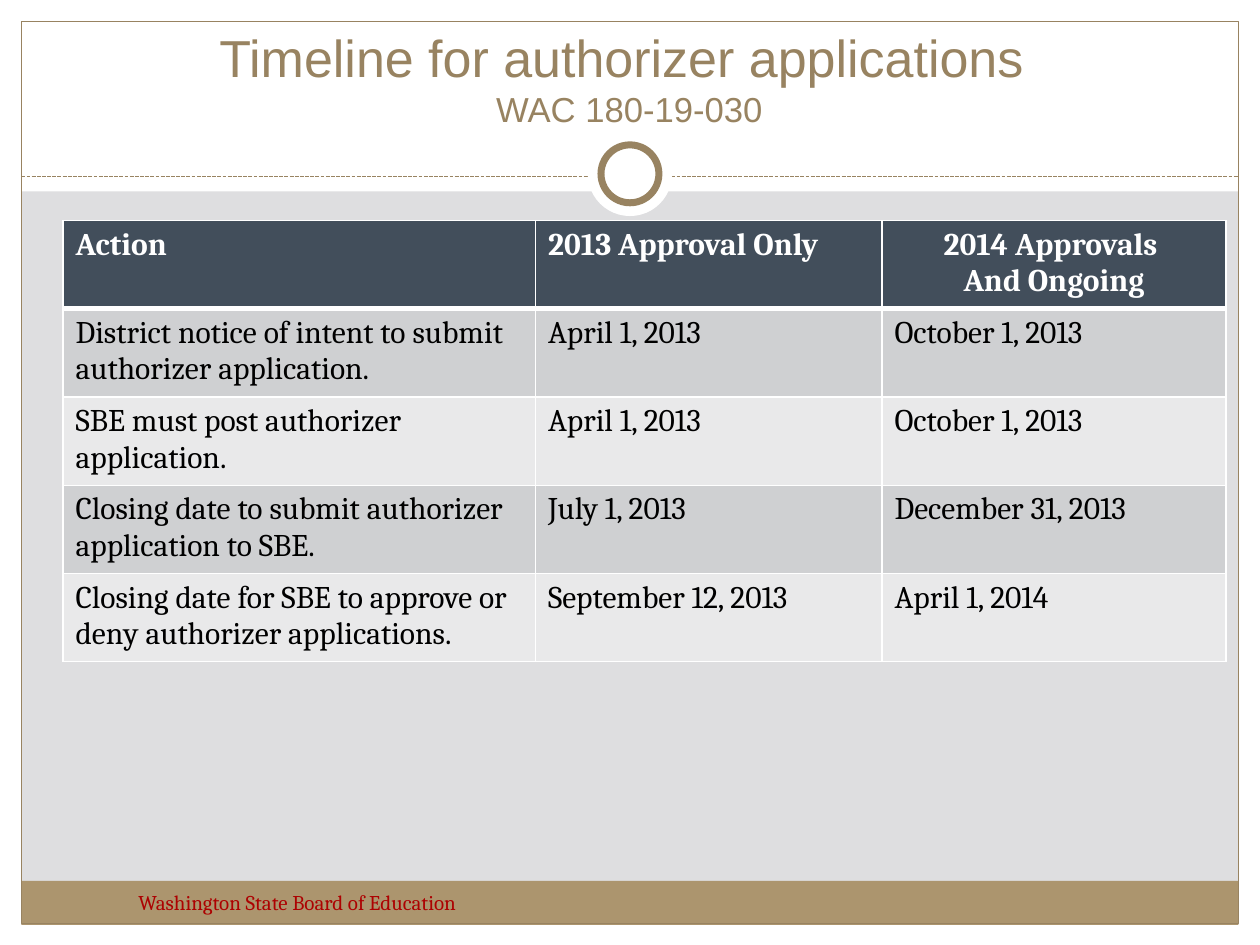
from lxml import etree
from pptx import Presentation, util as u
from pptx.dml.color import RGBColor
from pptx.enum import dml, shapes, text
from pptx.oxml.ns import qn

WHITE = RGBColor(0xFF, 0xFF, 0xFF)
BLACK = RGBColor(0, 0, 0)
GRAY = RGBColor(0xDE, 0xDE, 0xE0)
TAN = RGBColor(0xAC, 0x95, 0x6E)
BROWN = RGBColor(0x98, 0x83, 0x61)
RED = RGBColor(0xAD, 0x01, 0x01)
SLATE = RGBColor(0x42, 0x4E, 0x5B)
BANDS = RGBColor(0xCF, 0xD0, 0xD2), RGBColor(0xE9, 0xE9, 0xEA)

WIDE, HIGH = 10, 7.5
EDGE = 0.17
MID = WIDE / 2
RULE = 1.4
RING = 1.38
COLS = 3.75, 2.75, 2.73
ROW = 0.68
HEAD = ["Action"], ["2013 Approval Only"], ["2014 Approvals ", "And Ongoing"]
DATES = [
    ("District notice of intent to submit authorizer application.",
     "April 1, 2013", "October 1, 2013"),
    ("SBE must post authorizer application.", "April 1, 2013", "October 1, 2013"),
    ("Closing date to submit authorizer application to SBE.",
     "July 1, 2013", "December 31, 2013"),
    ("Closing date for SBE to approve or deny authorizer applications.",
     "September 12, 2013", "April 1, 2014"),
]


def inch(*vals):
    return [u.Inches(v) for v in vals]


def add_form(slide, kind, box, fill=None, line=None, width=0.75):
    form = slide.shapes.add_shape(kind, *inch(*box))
    form.shadow.inherit = False
    if fill is None:
        form.fill.background()
    else:
        form.fill.solid()
        form.fill.fore_color.rgb = fill
    if line is None:
        form.line.fill.background()
    else:
        form.line.color.rgb = line
        form.line.width = u.Pt(width)


def add_disc(slide, size, **style):
    """Draw a white circle centred on the ring's middle."""
    box = MID - size / 2, RING - size / 2, size, size
    add_form(slide, shapes.MSO_SHAPE.OVAL, box, WHITE, **style)


def add_rule(slide):
    rule = slide.shapes.add_connector(
        shapes.MSO_CONNECTOR.STRAIGHT, *inch(EDGE, RULE, WIDE - EDGE, RULE))
    rule.line.color.rgb = BROWN
    rule.line.width = u.Pt(0.75)
    rule.line.dash_style = dml.MSO_LINE.SQUARE_DOT
    etree.SubElement(rule._element.spPr, qn("a:effectLst"))


def add_run(para, words, face, size, color, bold=False):
    run = para.add_run()
    run.text = words
    font = run.font
    font.name, font.size, font.bold = face, u.Pt(size), bold
    font.color.rgb = color


def add_box(slide, box):
    frame = slide.shapes.add_textbox(*inch(*box)).text_frame
    frame.word_wrap = True
    return frame


def add_title(slide):
    frame = add_box(slide, (0.33, 0.25, 9.33, 0.83))
    frame.vertical_anchor = text.MSO_ANCHOR.BOTTOM
    para = frame.paragraphs[0]
    para.alignment = text.PP_ALIGN.CENTER
    add_run(para, "Timeline for authorizer applications ", "Arial", 29.7, BROWN)
    para.add_line_break()
    add_run(para, "WAC 180-19-030", "Arial", 19.8, BROWN)


def set_edges(cell, base):
    """Give a cell white borders, the bottom one `base` points wide."""
    props = cell._tc.get_or_add_tcPr()
    for side, width in zip("LRTB", (1, 1, 1, base)):
        edge = etree.SubElement(props, qn(f"a:ln{side}"), w=str(u.Pt(width)))
        fill = etree.SubElement(edge, qn("a:solidFill"))
        etree.SubElement(fill, qn("a:srgbClr"), val=str(WHITE))


def fill_cell(cell, lines, fill, color, bold=False, base=1):
    set_edges(cell, base)
    cell.fill.solid()
    cell.fill.fore_color.rgb = fill
    frame = cell.text_frame
    for i, line in enumerate(lines):
        para = frame.add_paragraph() if i else frame.paragraphs[0]
        if len(lines) > 1:
            para.alignment = text.PP_ALIGN.CENTER
        add_run(para, line, "Cambria", 18, color, bold)


def add_dates(slide):
    count = len(DATES) + 1
    table = slide.shapes.add_table(
        count, len(COLS), *inch(0.5, 1.75, sum(COLS), count * ROW)).table
    for col, width in zip(table.columns, COLS):
        col.width = u.Inches(width)
    for c, lines in enumerate(HEAD):
        # A thicker border sets the head off from the body.
        fill_cell(table.cell(0, c), lines, SLATE, WHITE, bold=True, base=3)
    for r, row in enumerate(DATES):
        for c, words in enumerate(row):
            fill_cell(table.cell(r + 1, c), [words], BANDS[r % 2], BLACK)


def main():
    deck = Presentation()
    deck.slide_width, deck.slide_height = inch(WIDE, HIGH)
    slide = deck.slides.add_slide(deck.slide_layouts[6])
    back = slide.background.fill
    back.solid()
    back.fore_color.rgb = GRAY

    rect = shapes.MSO_SHAPE.RECTANGLE
    for box in ((0, HIGH - EDGE, WIDE, EDGE), (0, 0, WIDE, 1.52),
                (0, 0, EDGE, HIGH), (WIDE - EDGE, 0, EDGE, HIGH)):
        add_form(slide, rect, box, WHITE)
    add_form(slide, rect, (EDGE, 6.99, WIDE - 2 * EDGE, 0.35), TAN)
    add_form(slide, rect, (EDGE, EDGE, WIDE - 2 * EDGE, HIGH - 2 * EDGE), line=BROWN)
    add_rule(slide)
    add_disc(slide, 0.67)
    add_disc(slide, 0.46, line=BROWN, width=4)

    add_title(slide)
    foot = add_box(slide, (1, 7.01, 3.92, 0.4))
    add_run(foot.paragraphs[0], "Washington State Board of Education",
            "Cambria", 12, RED)
    add_dates(slide)
    deck.save("out.pptx")


if __name__ == "__main__":
    main()
